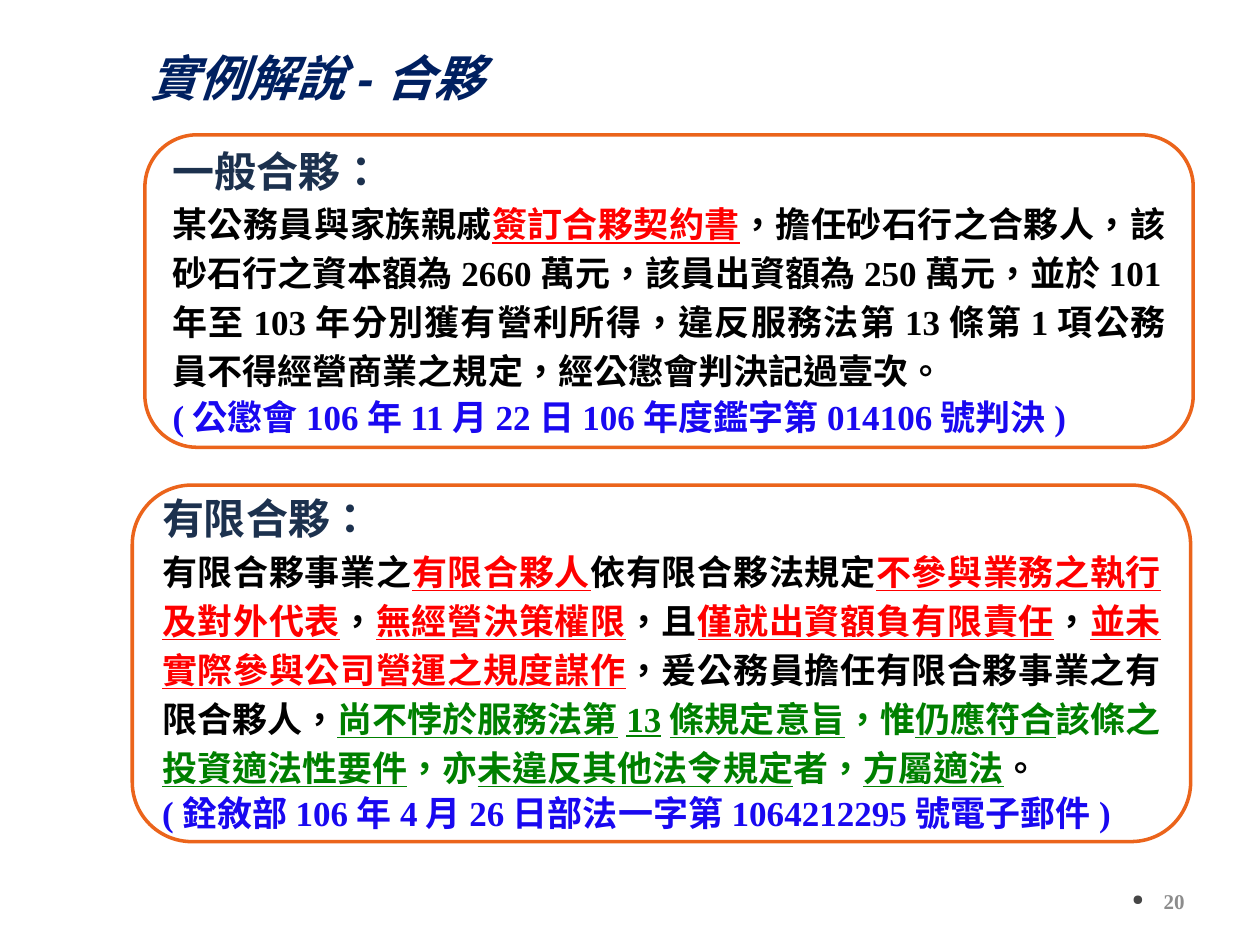
from dataclasses import dataclass

import lxml.etree
import pptx
import pptx.dml.color
import pptx.enum.shapes
import pptx.enum.text
import pptx.oxml.ns
import pptx.util

Inches = pptx.util.Inches
Align = pptx.enum.text.PP_ALIGN
Anchor = pptx.enum.text.MSO_ANCHOR
qn = pptx.oxml.ns.qn


@dataclass(frozen=True)
class Theme:
    title: str = "002060"
    heading: str = "1C314E"
    body: str = "000000"
    warning: str = "FF0000"
    lawful: str = "008000"
    citation: str = "1908F0"
    border: str = "EB641B"
    panel: str = "FFFFFF"
    page: str = "8C8C8C"
    bullet: str = "464646"
    title_size: int = 28
    heading_size: int = 24
    body_size: int = 20
    page_size: int = 12
    border_width: int = 2
    body_spacing: int = 28
    citation_spacing: int = 26
    title_font: str = "Arial"
    body_font: str = "Times New Roman"
    chinese_font: str = "Noto Sans CJK SC"


THEME = Theme()


@dataclass(frozen=True)
class Span:
    text: str
    color: str = THEME.body
    underline: bool = False


@dataclass(frozen=True)
class CasePanel:
    left: float
    top: float
    width: float
    height: float
    heading: str
    body: list[Span]
    citation: str


def warning(text: str) -> Span:
    return Span(text, THEME.warning, True)


def lawful(text: str, underline: bool = True) -> Span:
    return Span(text, THEME.lawful, underline)


def rgb(color: str) -> pptx.dml.color.RGBColor:
    return pptx.dml.color.RGBColor.from_string(color)


def add_run(paragraph, span: Span, size: int, font_name: str, italic: bool = False) -> None:
    run = paragraph.add_run()
    run.text = span.text
    font = run.font
    font.size = pptx.util.Pt(size)
    font.name = font_name
    font.bold = True
    font.italic = italic
    font.underline = span.underline
    font.color.rgb = rgb(span.color)
    # East Asian typeface and language
    properties = run._r.get_or_add_rPr()
    properties.set("lang", "zh-TW")
    properties.find(qn("a:latin")).addnext(
        properties.makeelement(qn("a:ea"), {"typeface": THEME.chinese_font}))


def add_title(slide, text: str) -> None:
    title = slide.shapes.title
    title.left, title.top = Inches(1.09), Inches(0.33)
    title.width, title.height = Inches(6.38), Inches(0.57)
    frame = title.text_frame
    frame.auto_size = pptx.enum.text.MSO_AUTO_SIZE.NONE
    frame.vertical_anchor = Anchor.TOP
    paragraph = frame.paragraphs[0]
    paragraph.alignment = Align.LEFT
    add_run(paragraph, Span(text, THEME.title), THEME.title_size, THEME.title_font, italic=True)


def add_case_panel(slide, panel: CasePanel) -> None:
    shape = slide.shapes.add_shape(
        pptx.enum.shapes.MSO_SHAPE.ROUNDED_RECTANGLE,
        Inches(panel.left), Inches(panel.top), Inches(panel.width), Inches(panel.height))
    shape.shadow.inherit = False
    shape.fill.solid()
    shape.fill.fore_color.rgb = rgb(THEME.panel)
    shape.line.color.rgb = rgb(THEME.border)
    shape.line.width = pptx.util.Pt(THEME.border_width)
    frame = shape.text_frame
    frame.word_wrap = True
    frame.vertical_anchor = Anchor.MIDDLE

    # Heading, explanation, then the source of the ruling
    rows = [
        ([Span(panel.heading, THEME.heading)], THEME.heading_size, THEME.chinese_font, None),
        (panel.body, THEME.body_size, THEME.body_font, THEME.body_spacing),
        ([Span(panel.citation, THEME.citation)], THEME.body_size, THEME.body_font,
         THEME.citation_spacing),
    ]
    for index, (spans, size, font_name, spacing) in enumerate(rows):
        paragraph = frame.add_paragraph() if index else frame.paragraphs[0]
        paragraph.alignment = Align.JUSTIFY
        if spacing:
            paragraph.line_spacing = pptx.util.Pt(spacing)
        for span in spans:
            add_run(paragraph, span, size, font_name)


def add_page_number(slide, number: str) -> None:
    box = slide.shapes.add_textbox(Inches(7.17), Inches(6.95), Inches(2.33), Inches(0.4))
    frame = box.text_frame
    frame.word_wrap = True
    frame.vertical_anchor = Anchor.MIDDLE
    paragraph = frame.paragraphs[0]
    paragraph.alignment = Align.RIGHT
    # Round bullet with a hanging indent
    properties = paragraph._p.get_or_add_pPr()
    indent = Inches(0.25)
    properties.set("marL", str(indent))
    properties.set("indent", str(-indent))
    color = lxml.etree.SubElement(properties, qn("a:buClr"))
    lxml.etree.SubElement(color, qn("a:srgbClr"), val=THEME.bullet)
    lxml.etree.SubElement(properties, qn("a:buSzPct"), val="70000")
    lxml.etree.SubElement(properties, qn("a:buChar"), char="●")
    add_run(paragraph, Span(number, THEME.page), THEME.page_size, THEME.body_font)


PANELS = [
    CasePanel(
        1.15, 1.07, 8.32, 2.48, "一般合夥：",
        [
            Span("某公務員與家族親戚"),
            warning("簽訂合夥契約書"),
            Span("，擔任砂石行之合夥人，該砂石行之資本額為2660萬元，該員出資額為250萬元，"
                 "並於101年至103年分別獲有營利所得，違反服務法第13條第1項公務員不得經營商業之規定，"
                 "經公懲會判決記過壹次。"),
        ],
        "(公懲會106年11月22日106年度鑑字第014106號判決)"),
    CasePanel(
        1.05, 3.85, 8.4, 2.83, "有限合夥：",
        [
            Span("有限合夥事業之"),
            warning("有限合夥人"),
            Span("依有限合夥法規定"),
            warning("不參與業務之執行及對外代表"),
            Span("，"),
            warning("無經營決策權限"),
            Span("，且"),
            warning("僅就出資額負有限責任"),
            Span("，"),
            warning("並未實際參與公司營運之規度謀作"),
            Span("，爰公務員擔任有限合夥事業之有限合夥人，"),
            lawful("尚不悖於服務法第13條規定意旨"),
            lawful("，惟", False),
            lawful("仍應符合"),
            lawful("該條之", False),
            lawful("投資適法性要件"),
            lawful("，亦", False),
            lawful("未違反其他法令規定"),
            lawful("者，", False),
            lawful("方屬適法"),
            Span("。"),
        ],
        "(銓敘部106年4月26日部法一字第1064212295號電子郵件)"),
]


def main() -> None:
    presentation = pptx.Presentation()
    presentation.slide_width, presentation.slide_height = Inches(10), Inches(7.5)
    slide = presentation.slides.add_slide(presentation.slide_layouts[5])
    add_title(slide, "實例解說-合夥")
    for panel in PANELS:
        add_case_panel(slide, panel)
    add_page_number(slide, "20")
    presentation.save("out.pptx")


if __name__ == "__main__":
    main()
